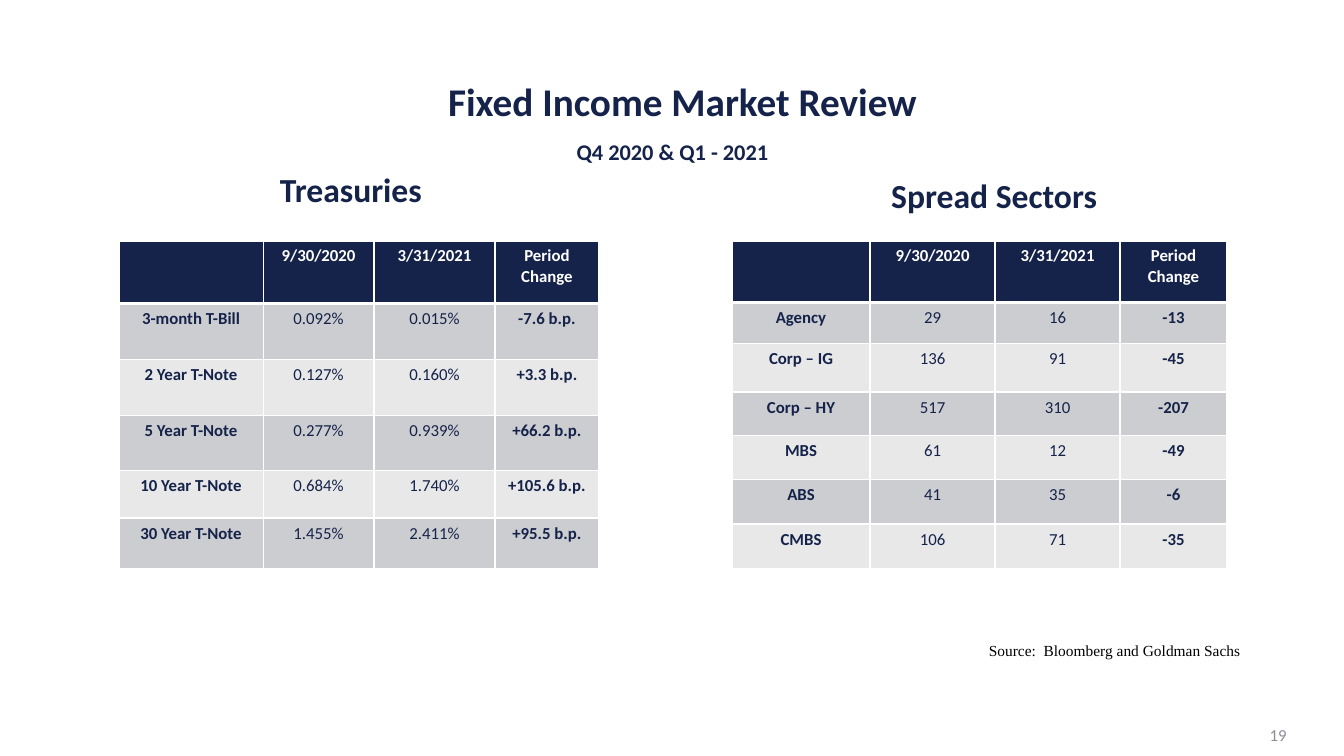
import dataclasses

import lxml.etree
import pptx
import pptx.dml.color
import pptx.enum.text
import pptx.oxml.ns
import pptx.util

Inches = pptx.util.Inches
Pt = pptx.util.Pt
ALIGN = pptx.enum.text.PP_ALIGN
ANCHOR = pptx.enum.text.MSO_ANCHOR


@dataclasses.dataclass(frozen=True)
class Theme:
    navy: str = "15234A"
    white: str = "FFFFFF"
    black: str = "000000"
    gray: str = "8C8D96"
    bands: tuple = ("E8E8E9", "CCCDD0")
    font: str = "Calibri"
    source_font: str = "Times New Roman"
    title: int = 28
    heading: int = 24
    subtitle: int = 16
    body: int = 12
    source: int = 11


THEME = Theme()

TREASURIES = {
    "cols": [1.43, 1.1, 1.2, 1.03],
    "rows": [0.62, 0.56, 0.55, 0.55, 0.47, 0.5],
    "cells": [
        ["", "9/30/2020", "3/31/2021", "Period Change"],
        ["3-month T-Bill", "0.092%", "0.015%", "-7.6 b.p."],
        ["2 Year T-Note", "0.127%", "0.160%", "+3.3 b.p."],
        ["5 Year T-Note", "0.277%", "0.939%", "+66.2 b.p."],
        ["10 Year T-Note", "0.684%", "1.740%", "+105.6 b.p."],
        ["30 Year T-Note", "1.455%", "2.411%", "+95.5 b.p."],
    ],
}

SPREADS = {
    "cols": [1.37, 1.24, 1.24, 1.06],
    "rows": [0.61, 0.41, 0.48, 0.43, 0.44, 0.44, 0.44],
    "cells": [
        ["", "9/30/2020", "3/31/2021", "Period\nChange"],
        ["Agency", "29", "16", "-13"],
        ["Corp – IG", "136", "91", "-45"],
        ["Corp – HY", "517", "310", "-207"],
        ["MBS", "61", "12", "-49"],
        ["ABS", "41", "35", "-6"],
        ["CMBS", "106", "71", "-35"],
    ],
}


def rgb(color):
    return pptx.dml.color.RGBColor.from_string(color)


def write(tf, text, size, color=THEME.navy, bold=True, font=THEME.font, align=ALIGN.CENTER):
    for i, line in enumerate(text.split("\n")):
        p = tf.paragraphs[0] if i == 0 else tf.add_paragraph()
        p.alignment = align
        r = p.add_run()
        r.text = line
        r.font.size = Pt(size)
        r.font.name = font
        r.font.bold = bold
        r.font.color.rgb = rgb(color)


def add_label(slide, box, text, size, wrap=True, anchor=ANCHOR.TOP, **style):
    tf = slide.shapes.add_textbox(*map(Inches, box)).text_frame
    tf.word_wrap = wrap
    tf.vertical_anchor = anchor
    write(tf, text, size, **style)


def add_border(cell, side, width):
    qn = pptx.oxml.ns.qn
    tc_pr = cell._tc.get_or_add_tcPr()
    ln = lxml.etree.SubElement(tc_pr, qn("a:ln" + side), w=str(Pt(width)))
    fill = lxml.etree.SubElement(ln, qn("a:solidFill"))
    lxml.etree.SubElement(fill, qn("a:srgbClr"), val=THEME.white)


def format_cell(cell, row, col, text):
    header = row == 0
    widths = {"L": 1, "R": 1, "T": 3 if row == 1 else 1, "B": 3 if header else 1}
    for side, width in widths.items():
        add_border(cell, side, width)
    cell.fill.solid()
    cell.fill.fore_color.rgb = rgb(THEME.navy if header else THEME.bands[row % 2])
    if text:
        write(cell.text_frame, text, THEME.body,
              color=THEME.white if header else THEME.navy,
              bold=header or col in (0, 3))


def add_market_table(slide, left, top, data):
    cols, rows = data["cols"], data["rows"]
    box = map(Inches, (left, top, sum(cols), sum(rows)))
    table = slide.shapes.add_table(len(rows), len(cols), *box).table
    for column, width in zip(table.columns, cols):
        column.width = Inches(width)
    for i, (height, values) in enumerate(zip(rows, data["cells"])):
        table.rows[i].height = Inches(height)
        for j, text in enumerate(values):
            format_cell(table.cell(i, j), i, j, text)


def add_header(slide, left, top):
    title = slide.shapes.title
    title.left, title.top, title.width, title.height = map(Inches, (left, top, 9.08, 0.5))
    tf = title.text_frame
    tf.vertical_anchor = ANCHOR.MIDDLE
    write(tf, "Fixed Income Market Review ", THEME.title)
    tf.paragraphs[0].line_spacing = 0.9
    add_label(slide, (left + 2.69, top + 0.54, 3.42, 0.37), "Q4 2020 & Q1 - 2021", THEME.subtitle)


def add_section(slide, left, top, heading, offset, data):
    add_label(slide, (left + offset[0], top + offset[1], 3.42, 0.5), heading, THEME.heading)
    add_market_table(slide, left, top, data)


def add_footer(slide, left, top):
    add_label(slide, (left, top, 2.71, 0.29), "Source:  Bloomberg and Goldman Sachs", THEME.source,
              wrap=False, color=THEME.black, bold=False, font=THEME.source_font)
    add_label(slide, (left + 0.16, top + 0.78, 3, 0.4), "19", THEME.body,
              anchor=ANCHOR.MIDDLE, color=THEME.gray, bold=False, align=ALIGN.RIGHT)


def main():
    prs = pptx.Presentation()
    prs.slide_width, prs.slide_height = Inches(13.33), Inches(7.5)
    slide = prs.slides.add_slide(prs.slide_layouts[5])
    add_header(slide, 2.27, 0.78)
    add_section(slide, 1.18, 2.39, "Treasuries", (0.59, -0.76), TREASURIES)
    add_section(slide, 7.26, 2.39, "Spread Sectors", (0.89, -0.7), SPREADS)
    add_footer(slide, 9.7, 6.31)
    prs.save("out.pptx")


if __name__ == "__main__":
    main()
